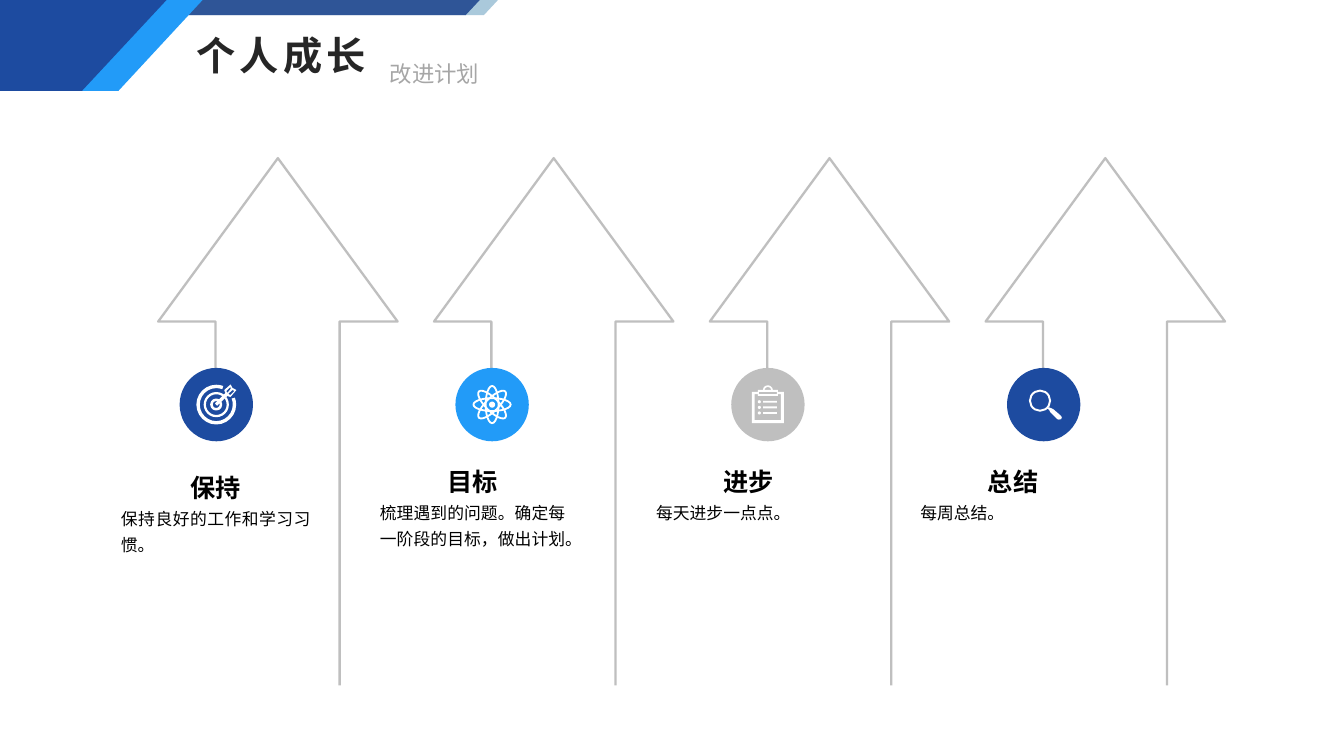
from lxml import etree
from pptx import Presentation
from pptx.dml.color import RGBColor
from pptx.enum.shapes import MSO_SHAPE
from pptx.enum.text import MSO_ANCHOR, MSO_AUTO_SIZE, PP_ALIGN
from pptx.oxml.ns import qn
from pptx.util import Pt

ARC, OVAL = MSO_SHAPE.ARC, MSO_SHAPE.OVAL
PARALLELOGRAM, RECTANGLE = MSO_SHAPE.PARALLELOGRAM, MSO_SHAPE.RECTANGLE
LEFT, CENTER, JUSTIFY = PP_ALIGN.LEFT, PP_ALIGN.CENTER, PP_ALIGN.JUSTIFY
TOP, MIDDLE = MSO_ANCHOR.TOP, MSO_ANCHOR.MIDDLE
NO_AUTOSIZE = MSO_AUTO_SIZE.NONE

FONT = "Noto Sans CJK SC"
COLORS = {
    "navy": "1D4BA0",
    "sky": "229BF8",
    "steel": "2F5597",
    "teal": "1A6D9F",
    "gray": "A5A5A5",
    "outline": "BFBFBF",
    "title": "262626",
    "subtitle": "A6A6A6",
    "black": "000000",
    "white": "FFFFFF",
}


class SlideBuilder:
    def __init__(self, slide):
        self.slide = slide

    def color(self, name):
        return RGBColor.from_string(COLORS[name])

    def paint(self, shape, fill, alpha=100):
        shape.shadow.inherit = False
        shape.fill.solid()
        shape.fill.fore_color.rgb = self.color(fill)
        shape.line.fill.background()
        if alpha < 100:
            color = shape._element.spPr.find(".//" + qn("a:srgbClr"))
            etree.SubElement(color, qn("a:alpha")).set("val", str(alpha * 1000))

    def stroke(self, shape, color, width):
        shape.shadow.inherit = False
        shape.fill.background()
        shape.line.color.rgb = self.color(color)
        shape.line.width = Pt(width)

    def add(self, kind, left, top, width, height):
        return self.slide.shapes.add_shape(kind, Pt(left), Pt(top), Pt(width), Pt(height))

    def preset(self, kind, left, top, width, height, fill, alpha=100):
        shape = self.add(kind, left, top, width, height)
        self.paint(shape, fill, alpha)
        return shape

    def disc(self, x, y, radius, fill, alpha=100):
        self.preset(OVAL, x - radius, y - radius, 2 * radius, 2 * radius, fill, alpha)

    def ring(self, x, y, radius_x, radius_y, width, tilt=0):
        shape = self.add(OVAL, x - radius_x, y - radius_y, 2 * radius_x, 2 * radius_y)
        shape.rotation = tilt
        self.stroke(shape, "white", width)

    def arc(self, x, y, radius, width, start, end):
        shape = self.add(ARC, x - radius, y - radius, 2 * radius, 2 * radius)
        shape.adjustments[0], shape.adjustments[1] = start * 0.6, end * 0.6
        self.stroke(shape, "white", width)

    def outline(self, contours, origin=(0, 0), close=True):
        placed = [[(Pt(origin[0] + x), Pt(origin[1] + y)) for x, y in contour]
                  for contour in contours]
        builder = self.slide.shapes.build_freeform(*placed[0][0])
        builder.add_line_segments(placed[0][1:], close=close)
        for contour in placed[1:]:
            builder.move_to(*contour[0])
            builder.add_line_segments(contour[1:], close=close)
        return builder.convert_to_shape()

    def polygon(self, contours, fill, origin=(0, 0)):
        self.paint(self.outline(contours, origin), fill)

    def run(self, paragraph, text, size, color, bold=False, spacing=0):
        run = paragraph.add_run()
        run.text = text
        run.font.size = Pt(size)
        run.font.bold = bold
        run.font.name = FONT
        run.font.color.rgb = self.color(color)
        properties = run._r.get_or_add_rPr()
        etree.SubElement(properties, qn("a:ea")).set("typeface", FONT)
        if spacing:
            properties.set("spc", str(spacing * 100))

    def frame(self, shape, left, top, width, height, wrap, anchor):
        shape.left, shape.top, shape.width, shape.height = Pt(left), Pt(top), Pt(width), Pt(height)
        frame = shape.text_frame
        frame.word_wrap = wrap
        frame.auto_size = NO_AUTOSIZE
        frame.vertical_anchor = anchor
        return frame

    def heading(self, shape, bounds, *style):
        paragraph = self.frame(shape, *bounds, False, MIDDLE).paragraphs[0]
        paragraph.alignment = LEFT
        self.run(paragraph, *style)

    def text_box(self):
        return self.slide.shapes.add_textbox(0, 0, 0, 0)

    def caption(self, left, top, width, height, label, body):
        frame = self.frame(self.text_box(), left, top, width, height, True, TOP)
        frame.margin_left = frame.margin_right = frame.margin_top = frame.margin_bottom = 0
        label_paragraph, body_paragraph = frame.paragraphs[0], frame.add_paragraph()
        label_paragraph.alignment, body_paragraph.alignment = CENTER, JUSTIFY
        label_paragraph.line_spacing = body_paragraph.line_spacing = 1.3
        self.run(label_paragraph, label, 18, "black", True)
        self.run(body_paragraph, body, 12, "black")

    def arrow(self, left):
        points = [(129.6, 489.6), (129.6, 229.7), (171, 229.7), (85.5, 113),
                  (0, 229.7), (41, 229.7), (41, 262.8)]
        shape = self.outline([[(left + x, y) for x, y in points]], close=False)
        self.stroke(shape, "outline", 1.63)

    def target(self, x, y):
        for radius, width, gap in ((13, 2.4, 24), (8.2, 1.6, 7), (3.4, 1.8, 15)):
            self.arc(x, y, radius, width, 315 + gap, 315 - gap)
        dart = [(-0.9, -0.8), (6.5, -8.3), (5.8, -9.9), (5.9, -10.6), (10.3, -14.4),
                (11.5, -11.9), (14.4, -10.4), (10.6, -5.9), (10, -5.4), (7.9, -6.1), (0.6, 0.9)]
        upper_slot = [(10.1, -12.6), (7.2, -9.7), (7.9, -8.3), (10.4, -11.2)]
        lower_slot = [(11.5, -10.4), (8.6, -7.6), (10.1, -6.8), (13, -9.7)]
        self.polygon([dart, upper_slot, lower_slot], "white", (x, y))

    def atom(self, x, y):
        for tilt in (0, 45, 90, 135):
            self.ring(x, y, 13.3, 4.6, 1.3, tilt)
        self.disc(x, y, 2.2, "white")

    def clipboard(self, x, y):
        board = [(-11.5, -9), (-7.2, -9), (-7.2, -10.4), (7.2, -10.4), (7.2, -9),
                 (11.5, -9), (11.5, 13.3), (-11.5, 13.3)]
        sheet = [(-9.4, -7.5), (-7.2, -7.5), (-7.2, -6.1), (7.2, -6.1), (7.2, -7.5),
                 (9.4, -7.5), (9.4, 11.2), (-9.4, 11.2)]
        clip = [(-6.5, -9), (6.5, -9), (6.5, -7.5), (-6.5, -7.5)]
        self.polygon([board, sheet, clip], "white", (x, y))
        self.arc(x, y - 10.2, 3, 1.2, 180, 360)
        for row in (-2, 2, 6):
            self.disc(x - 6.1, y + row, 1.1, "white")
            self.preset(RECTANGLE, x - 3.4, y + row - 0.7, 9.8, 1.4, "white")

    def magnifier(self, x, y):
        self.ring(x - 2.6, y - 2.8, 7.2, 7.2, 1.4)
        handle = [(4, 2), (6.8, 3.2), (11.9, 7.6), (13, 9), (12.6, 10.4),
                  (10.8, 10.8), (9.7, 10.4), (4.7, 5.4), (4, 4), (2.5, 2.5)]
        self.polygon([handle], "white", (x, y))


def main():
    presentation = Presentation()
    presentation.slide_width, presentation.slide_height = Pt(960), Pt(540)
    slide = presentation.slides.add_slide(presentation.slide_layouts[5])
    builder = SlideBuilder(slide)

    for left, fill, alpha in ((85, "teal", 37), (72, "steel", 100)):
        builder.preset(PARALLELOGRAM, left, 0, 270.7, 10.8, fill, alpha).adjustments[0] = 0.93
    for top_right, bottom_right, fill in ((144.7, 84.5, "sky"), (119, 58.5, "navy")):
        builder.polygon([[(0, 0), (top_right, 0), (bottom_right, 65), (0, 65)]], fill)

    builder.heading(slide.shapes.title, (133.2, 18.7, 138.4, 41),
                    "个人成长", 28, "title", True, 3)
    builder.heading(builder.text_box(), (271.4, 39.6, 78.5, 26.6),
                    "改进计划", 16, "subtitle")

    columns = [
        ("navy", 100, builder.target, (86.4, 331.2, 135.4, 64),
         "保持", "保持良好的工作和学习习惯。"),
        ("sky", 100, builder.atom, (271.4, 326.4, 132.5, 64),
         "目标", "梳理遇到的问题。确定每一阶段的目标，做出计划。"),
        ("gray", 70, builder.clipboard, (468.7, 326.4, 132.5, 45.4),
         "进步", "每天进步一点点。"),
        ("navy", 100, builder.magnifier, (657.4, 326.4, 132.5, 45.4),
         "总结", "每周总结。"),
    ]
    for index, (fill, alpha, draw_icon, bounds, label, body) in enumerate(columns):
        left = 113 + 197 * index
        center = (left + 41.5, 289)
        builder.arrow(left)
        builder.disc(*center, 26.2, fill, alpha)
        draw_icon(*center)
        builder.caption(*bounds, label, body)

    presentation.save("out.pptx")


if __name__ == "__main__":
    main()
